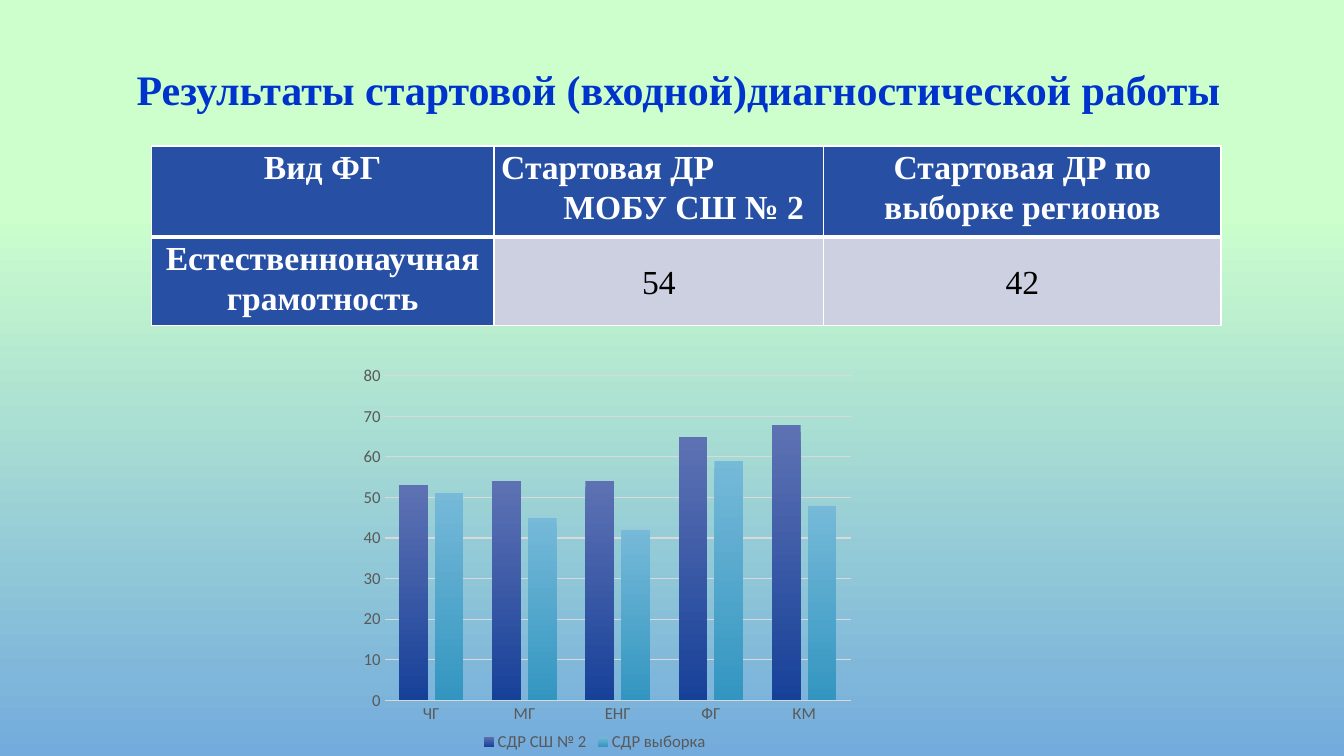
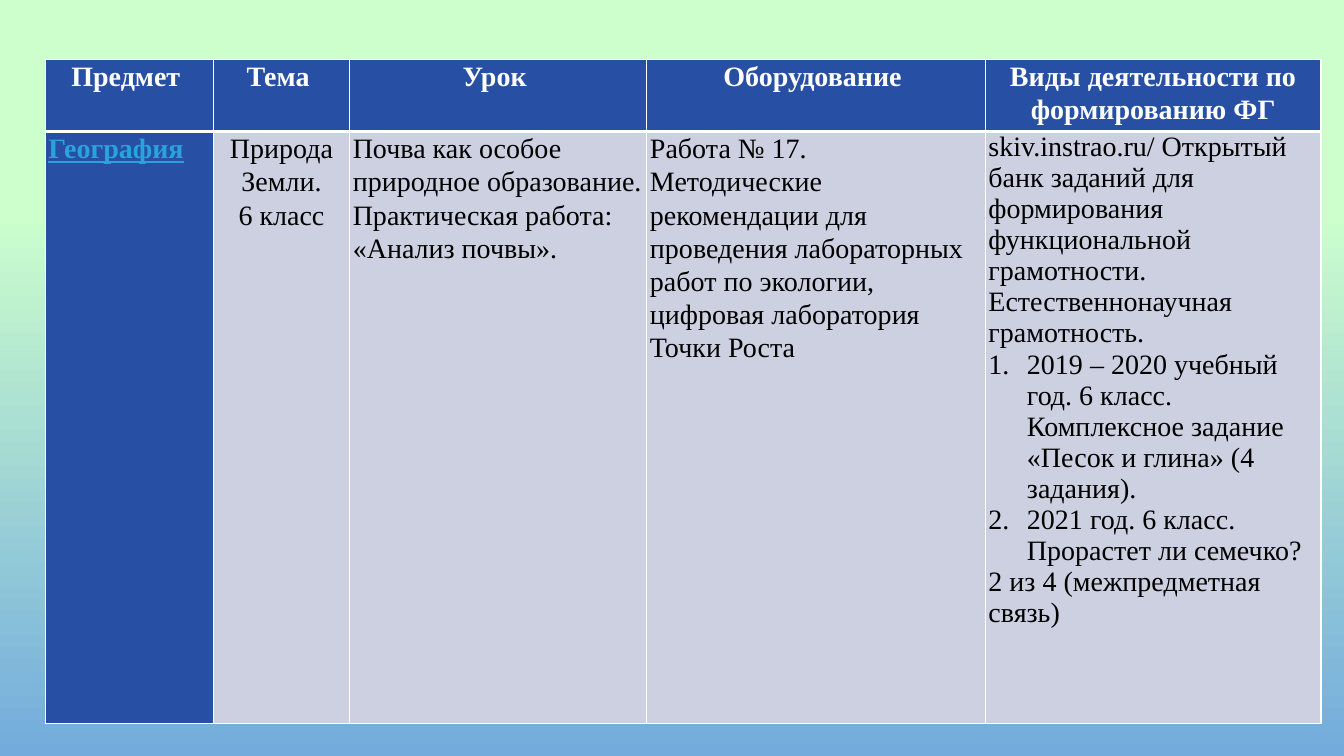
from lxml import etree
from pptx import Presentation
from pptx.chart.data import CategoryChartData
from pptx.dml.color import RGBColor
from pptx.enum import chart as ch, text as tx
from pptx.oxml.ns import qn
from pptx.util import Cm, Pt

COLORS = {
    "mint": "CCFFCC", "sky": "73ABDD", "title": "0033CC", "head": "274FA4",
    "body": "CDD0E0", "white": "FFFFFF", "black": "000000", "link": "2AA2DA",
    "grid": "D9D9D9", "label": "595959",
}
SERIF, SANS = "Times New Roman", "Calibri"
LEFT, CENTER = tx.PP_ALIGN.LEFT, tx.PP_ALIGN.CENTER

TITLE = "Результаты стартовой (входной)диагностической работы"

# A cell is a list of paragraphs: (text, paragraph options)
RESULTS = {
    "at": (3.81, 3.68), "cols": (8.64, 8.31, 10.01), "rows": (2.29, 2.24), "size": 24,
    "margins": {"margin_left": Cm(0.18), "margin_right": Cm(0.18),
                "margin_top": Cm(0.03), "margin_bottom": 0},
    "body_anchor": tx.MSO_ANCHOR.MIDDLE,
    "cells": [
        [[("Вид ФГ", {})],
         [("Стартовая ДР", {"align": LEFT}), ("МОБУ СШ № 2", {"align": LEFT, "indent": 1.57})],
         [("Стартовая ДР по выборке регионов", {})]],
        [[("Естественнонаучная грамотность", {})], [("54", {})], [("42", {})]],
    ],
}

FLUSH = {"align": LEFT}
TIGHT = {"align": LEFT, "spacing": 1.0}
NUMBERED = {**TIGHT, "indent": 0.97, "numbered": True}
LESSON = {
    "at": (1.14, 1.5), "cols": (4.24, 3.43, 7.49, 8.53, 8.46), "rows": (1.67, 14.91), "size": 20,
    "margins": {"margin_left": Cm(0.08), "margin_right": Cm(0.08),
                "margin_top": 0, "margin_bottom": 0},
    "body_anchor": tx.MSO_ANCHOR.TOP,
    "cells": [
        [[(heading, {})] for heading in (
            "Предмет ", "Тема ", "Урок ", "Оборудование ",
            "Виды деятельности по формированию ФГ")],
        [[("География", {"align": LEFT, "color": "link", "underline": True})],
         [("Природа Земли.", {}), ("6 класс", {})],
         [("Почва как особое природное образование. Практическая работа: "
           "«Анализ почвы».", FLUSH)],
         [("Работа № 17. Методические рекомендации для проведения лабораторных "
           "работ по экологии, цифровая лаборатория Точки Роста", FLUSH)],
         [("skiv.instrao.ru/ Открытый банк заданий для формирования функциональной "
           "грамотности. Естественнонаучная грамотность.", TIGHT),
          ("2019 – 2020 учебный год. 6 класс. Комплексное задание "
           "«Песок и глина» (4 задания).", NUMBERED),
          ("2021 год. 6 класс. Прорастет ли семечко?", NUMBERED),
          ("2 из 4 (межпредметная связь)", TIGHT)]],
    ],
}

KINDS = ["ЧГ", "МГ", "ЕНГ", "ФГ", "КМ"]
SCORES = [
    ("СДР СШ № 2", (53, 54, 54, 65, 68), ("5E72B3", "174199")),
    ("СДР выборка", (51, 45, 42, 59, 48), ("76B9D9", "3396C0")),
]
PLOT_AREA = {"x": 0.09, "y": 0.18, "w": 0.91, "h": 0.7}


def rgb(name):
    return RGBColor.from_string(COLORS.get(name, name))


def assign(target, values):
    for attribute, value in values.items():
        setattr(target, attribute, value)


def style_font(font, size, color, name=SERIF, **extra):
    assign(font, {"size": Pt(size), "name": name, **extra})
    font.color.rgb = rgb(color)


def fade_down(fill, stops):
    """Vertical gradient from (position, colour) pairs, first colour on top."""
    fill.gradient()
    fill.gradient_angle = 270
    for stop, (position, color) in zip(fill.gradient_stops, stops):
        stop.position = position
        stop.color.rgb = rgb(color)


def add_borders(cell, widths):
    properties = cell._tc.get_or_add_tcPr()
    for side, width in widths.items():
        line = etree.SubElement(properties, qn(f"a:ln{side}"), w=str(Pt(width)))
        solid = etree.SubElement(line, qn("a:solidFill"))
        etree.SubElement(solid, qn("a:srgbClr"), val=COLORS["white"])


def write_paragraph(paragraph, words, options, size, color, bold):
    assign(paragraph, {"alignment": options.get("align", CENTER),
                       "line_spacing": options.get("spacing", 1.07)})
    properties = paragraph._p.get_or_add_pPr()
    indent = Cm(options.get("indent", 0))
    properties.set("marL", str(indent))
    if options.get("numbered"):
        properties.set("indent", str(-indent))
        etree.SubElement(properties, qn("a:buAutoNum"), type="arabicPeriod")
    run = paragraph.add_run()
    run.text = words
    style_font(run.font, size, options.get("color", color), bold=bold,
               underline=options.get("underline", False))


def add_grid(slide, content):
    cols, rows = content["cols"], content["rows"]
    left, top = content["at"]
    table = slide.shapes.add_table(len(rows), len(cols), Cm(left), Cm(top),
                                   Cm(sum(cols)), Cm(sum(rows))).table
    table.first_col = True
    for column, width in zip(table.columns, cols):
        column.width = Cm(width)
    for r, (row, height) in enumerate(zip(table.rows, rows)):
        row.height = Cm(height)
        for c, paragraphs in enumerate(content["cells"][r]):
            cell = table.cell(r, c)
            heading = r == 0 or c == 0
            add_borders(cell, {"L": 1, "R": 1, "T": 3 if r else 1, "B": 1 if r else 3})
            cell.fill.solid()
            cell.fill.fore_color.rgb = rgb("head" if heading else "body")
            assign(cell, content["margins"])
            cell.vertical_anchor = tx.MSO_ANCHOR.TOP if heading else content["body_anchor"]
            frame = cell.text_frame
            for i, (words, options) in enumerate(paragraphs):
                paragraph = frame.add_paragraph() if i else frame.paragraphs[0]
                write_paragraph(paragraph, words, options, content["size"],
                                "white" if heading else "black", heading)


def place_plot(chart):
    """Fix the inner plot area as fractions of the chart frame."""
    plot_area = chart.element.find(".//" + qn("c:plotArea"))
    for automatic in plot_area.findall(qn("c:layout")):
        plot_area.remove(automatic)
    layout = etree.Element(qn("c:layout"))
    manual = etree.SubElement(layout, qn("c:manualLayout"))
    settings = {"layoutTarget": "inner", "xMode": "edge", "yMode": "edge", **PLOT_AREA}
    for tag, value in settings.items():
        etree.SubElement(manual, qn(f"c:{tag}"), val=str(value))
    plot_area.insert(0, layout)


def add_scores(slide):
    data = CategoryChartData()
    data.categories = KINDS
    for name, values, _ in SCORES:
        data.add_series(name, values)
    chart = slide.shapes.add_chart(ch.XL_CHART_TYPE.COLUMN_CLUSTERED, Cm(8.53), Cm(7.37),
                                   Cm(12.93), Cm(11.68), data).chart
    assign(chart, {"has_title": False, "has_legend": True})
    style_font(chart.font, 10, "black", SANS)
    assign(chart.legend, {"position": ch.XL_LEGEND_POSITION.BOTTOM, "include_in_layout": False})
    plot = chart.plots[0]
    assign(plot, {"gap_width": 100, "overlap": -24, "vary_by_categories": False})
    for series, (_, _, shades) in zip(plot.series, SCORES):
        fade_down(series.format.fill, zip((0, 1), shades))

    kinds, points = chart.category_axis, chart.value_axis
    for axis in (kinds, points):
        assign(axis, {"major_tick_mark": ch.XL_TICK_MARK.NONE,
                      "minor_tick_mark": ch.XL_TICK_MARK.NONE})
    for part in (kinds.tick_labels, points.tick_labels, chart.legend):
        style_font(part.font, 12, "label", SANS)
    assign(points, {"minimum_scale": 0, "maximum_scale": 80, "major_unit": 10,
                    "has_major_gridlines": True})
    points.format.line.fill.background()
    for line, width in ((kinds.format.line, 1), (points.major_gridlines.format.line, 0.75)):
        line.width = Pt(width)
        line.color.rgb = rgb("grid")
    place_plot(chart)


def add_title(slide, words):
    title = slide.shapes.title
    assign(title, {"left": Cm(3.05), "top": Cm(1.45), "width": Cm(28.12), "height": Cm(1.55)})
    frame = title.text_frame
    assign(frame, {"text": words, "word_wrap": False,
                   "auto_size": tx.MSO_AUTO_SIZE.SHAPE_TO_FIT_TEXT})
    frame.paragraphs[0].alignment = CENTER
    style_font(frame.paragraphs[0].runs[0].font, 30, "title", bold=True)


def main():
    deck = Presentation()
    assign(deck, {"slide_width": Cm(33.87), "slide_height": Cm(19.05)})
    fade_down(deck.slide_master.background.fill, ((0.28, "mint"), (1, "sky")))
    title_only, blank = deck.slide_layouts[5], deck.slide_layouts[6]

    results = deck.slides.add_slide(title_only)
    add_title(results, TITLE)
    add_grid(results, RESULTS)
    add_scores(results)

    lesson = deck.slides.add_slide(blank)
    add_grid(lesson, LESSON)
    deck.save("out.pptx")


if __name__ == "__main__":
    main()
